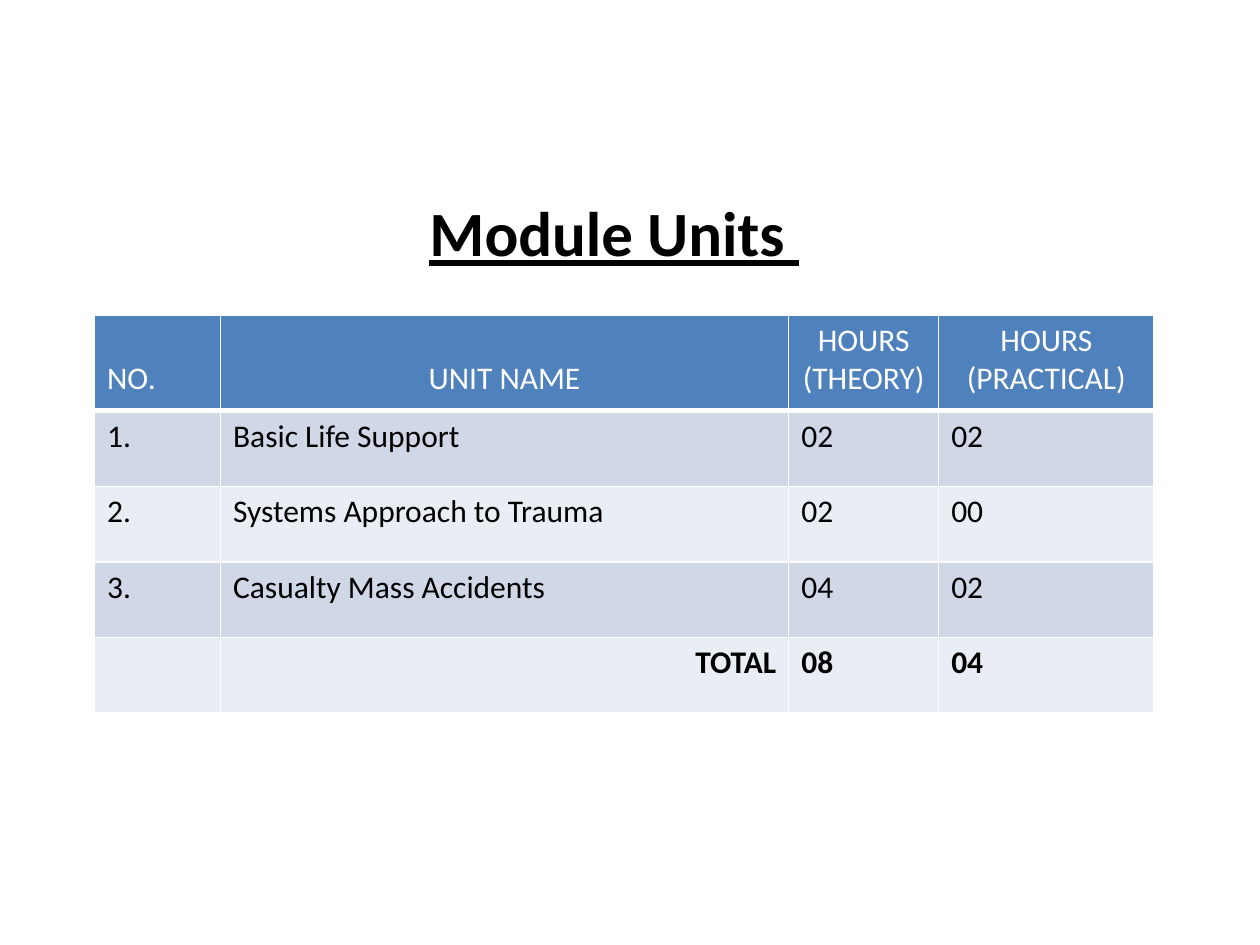
from dataclasses import dataclass

from lxml import etree
from pptx import Presentation
from pptx.dml.color import RGBColor
from pptx.enum.text import MSO_ANCHOR, PP_ALIGN
from pptx.oxml.ns import qn
from pptx.util import Inches, Pt

LEFT, CENTER, RIGHT = PP_ALIGN.LEFT, PP_ALIGN.CENTER, PP_ALIGN.RIGHT
TOP, MIDDLE, BOTTOM = MSO_ANCHOR.TOP, MSO_ANCHOR.MIDDLE, MSO_ANCHOR.BOTTOM


@dataclass(frozen=True)
class Theme:
    font: str = "Calibri"
    title_size: int = 36
    table_size: int = 18
    ink: str = "000000"
    white: str = "FFFFFF"
    header: str = "4F81BD"
    bands: tuple = ("D0D8E8", "E9EDF4")
    border: int = 1
    header_border: int = 3


THEME = Theme()
COLUMN_WIDTHS = (1, 4.51, 1.19, 1.71)
HEADER_HEIGHT = 0.76
ROW_HEIGHT = 0.6
HEADERS = ("NO.", "UNIT NAME", "HOURS\n(THEORY)", "HOURS\n(PRACTICAL)")
UNITS = (
    ("1.", "Basic Life Support", "02", "02"),
    ("2.", "Systems Approach to Trauma", "02", "00"),
    ("3.", "Casualty Mass Accidents", "04", "02"),
)
TOTALS = ("", "TOTAL", "08", "04")


def write_text(frame, text, size=THEME.table_size, color=THEME.ink,
               bold=False, underline=False, align=LEFT):
    frame.word_wrap = True
    for index, line in enumerate(text.split("\n")):
        paragraph = frame.add_paragraph() if index else frame.paragraphs[0]
        paragraph.alignment = align
        if not line:
            continue
        run = paragraph.add_run()
        run.text = line
        font = run.font
        font.name = THEME.font
        font.size = Pt(size)
        font.bold = bold
        font.underline = underline
        font.color.rgb = RGBColor.from_string(color)


def set_borders(cell, bottom_width):
    properties = cell._tc.get_or_add_tcPr()
    widths = {"a:lnL": THEME.border, "a:lnR": THEME.border,
              "a:lnT": THEME.border, "a:lnB": bottom_width}
    for position, (tag, width) in enumerate(widths.items()):
        line = etree.Element(qn(tag), w=str(Pt(width)))
        fill = etree.SubElement(line, qn("a:solidFill"))
        etree.SubElement(fill, qn("a:srgbClr"), val=THEME.white)
        properties.insert(position, line)


def fill_cell(cell, text, fill, border=THEME.border, anchor=TOP, **text_format):
    cell.fill.solid()
    cell.fill.fore_color.rgb = RGBColor.from_string(fill)
    cell.vertical_anchor = anchor
    set_borders(cell, border)
    write_text(cell.text_frame, text, **text_format)


def add_title(slide, left, top, width, height):
    box = slide.shapes.add_textbox(Inches(left), Inches(top), Inches(width), Inches(height))
    box.text_frame.vertical_anchor = MIDDLE
    write_text(box.text_frame, "Module Units ", size=THEME.title_size,
               bold=True, underline=True, align=CENTER)


def add_units_table(slide, left, top, width, height):
    body = (*UNITS, TOTALS)
    table = slide.shapes.add_table(
        len(body) + 1, len(HEADERS),
        Inches(left), Inches(top), Inches(width), Inches(height)).table
    for column, column_width in zip(table.columns, COLUMN_WIDTHS):
        column.width = Inches(column_width)
    for index, row in enumerate(table.rows):
        row.height = Inches(ROW_HEIGHT if index else HEADER_HEIGHT)

    for index, text in enumerate(HEADERS):
        cell = table.cell(0, index)
        cell.margin_bottom = Inches(0.1)
        fill_cell(cell, text, THEME.header, border=THEME.header_border,
                  anchor=BOTTOM, color=THEME.white, align=CENTER if index else LEFT)

    for row_index, values in enumerate(body):
        band = THEME.bands[row_index % len(THEME.bands)]
        is_total = values is TOTALS
        for index, text in enumerate(values):
            fill_cell(table.cell(row_index + 1, index), text, band, bold=is_total,
                      align=RIGHT if is_total and index == 1 else LEFT)


def main():
    presentation = Presentation()
    presentation.slide_width = Inches(10)
    presentation.slide_height = Inches(7.5)
    slide = presentation.slides.add_slide(presentation.slide_layouts[6])
    add_title(slide, 1.25, 1.5, 7.25, 0.67)
    add_units_table(slide, 0.75, 2.5, sum(COLUMN_WIDTHS),
                    HEADER_HEIGHT + ROW_HEIGHT * (len(UNITS) + 1))
    presentation.save("out.pptx")


if __name__ == "__main__":
    main()
